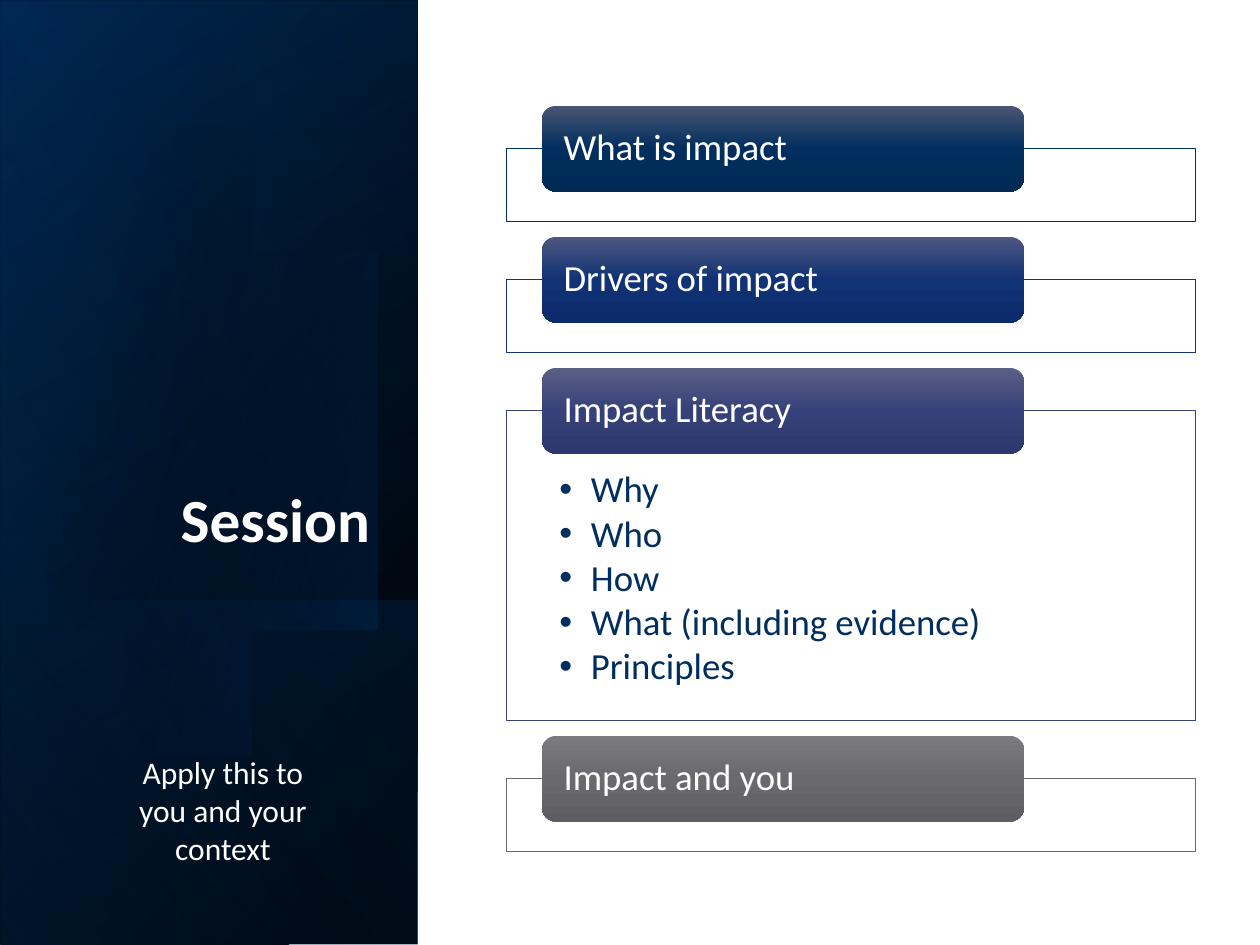
from typing import NamedTuple

from lxml.etree import SubElement
from pptx import Presentation
from pptx.dml.color import RGBColor
from pptx.enum.shapes import MSO_SHAPE as SHAPE
from pptx.enum.text import MSO_ANCHOR as ANCHOR, PP_ALIGN as ALIGN
from pptx.oxml.ns import qn
from pptx.util import Inches, Pt

WHITE = RGBColor(0xFF, 0xFF, 0xFF)
BLACK = RGBColor(0x00, 0x00, 0x00)
NAVY = RGBColor(0x00, 0x2E, 0x5E)
DEEP_NAVY = RGBColor(0x00, 0x22, 0x46)
BRIGHT_BLUE = RGBColor(0x05, 0x80, 0xFF)
FONT = "Calibri"


class Stop(NamedTuple):
    pos: int
    color: RGBColor
    alpha: int = 100


class Panel(NamedTuple):
    left: float
    top: float
    width: float
    angle: int
    stops: list[Stop]


class Topic(NamedTuple):
    label: str
    colors: tuple[str, str, str]
    line: str
    height: float = 0.58
    bullets: tuple[str, ...] = ()


PANEL_HEIGHT = 3.31
PANELS = [
    Panel(-2.09, 2.09, 7.5, 50, [Stop(8, BLACK), Stop(100, DEEP_NAVY)]),
    Panel(-2.09, 2.11, 7.5, 30, [Stop(0, BLACK, 0), Stop(99, NAVY, 46)]),
    Panel(0.29, 4.48, 2.74, 130, [Stop(2, NAVY, 29), Stop(100, BLACK, 30)]),
]
GLOW = Panel(-2.09, 2.09, 7.5, 120, [Stop(0, BLACK, 0), Stop(99, BRIGHT_BLUE, 11)])

# Outline of the rounded shade: start point, then Bezier (two controls, end)
SHADE_START = (0.96, 1.14)
SHADE_RIGHT = [
    ((1.71, 1.22), (2.44, 1.92), (2.73, 2.9)),
    ((3.07, 4.12), (2.62, 5.31), (1.71, 5.57)),
    ((1.14, 5.74), (0.53, 5.5), (0.07, 5)),
]
SHADE_EDGE = [(-0.03, 4.88), (-0.25, 1.66), (-0.15, 1.54)]
SHADE_TOP = [
    ((0.02, 1.37), (0.22, 1.25), (0.45, 1.18)),
    ((0.62, 1.13), (0.79, 1.12), (0.96, 1.14)),
]

TOPICS = [
    Topic("What is impact", ("4B5573", "002E5E", "002954"), "002E5E"),
    Topic("Drivers of impact", ("4D5782", "113275", "0B2B6C"), "163370"),
    Topic("Impact Literacy", ("5A5F86", "364179", "2D386E"), "394376", 2.46,
          ("Why", "Who", "How", "What (including evidence)", "Principles")),
    Topic("Impact and you", ("7B7B7F", "69696E", "5D5D62"), "69696E"),
]
TOPICS_TOP, TAB_RISE, TOPIC_GAP = 0.84, 0.34, 0.12


def set_attrs(obj, **values) -> None:
    for name, value in values.items():
        setattr(obj, name, value)


def set_gradient(sp, stops: list[Stop], angle: int) -> None:
    sp.fill.background()
    old = sp._element.spPr.find(qn("a:noFill"))
    grad = SubElement(sp._element.spPr, qn("a:gradFill"), rotWithShape="1")
    stop_list = SubElement(grad, qn("a:gsLst"))
    for stop in stops:
        gs = SubElement(stop_list, qn("a:gs"), pos=str(stop.pos * 1000))
        clr = SubElement(gs, qn("a:srgbClr"), val=str(stop.color))
        if stop.alpha < 100:
            SubElement(clr, qn("a:alpha"), val=str(stop.alpha * 1000))
    SubElement(grad, qn("a:lin"), ang=str(angle * 60000), scaled="0")
    sp._element.spPr.replace(old, grad)


def add_box(shapes, kind, left: float, top: float, width: float, height: float):
    sp = shapes.add_shape(kind, Inches(left), Inches(top), Inches(width), Inches(height))
    sp.shadow.inherit = False
    sp.line.fill.background()
    return sp


def add_panel(shapes, panel: Panel) -> None:
    sp = add_box(shapes, SHAPE.RECTANGLE, panel.left, panel.top, panel.width, PANEL_HEIGHT)
    sp.rotation = 90
    sp._element.spPr.find(qn("a:xfrm")).set("flipH", "1")
    set_gradient(sp, panel.stops, panel.angle)


def curve_points(start, curves, steps: int = 16) -> list[tuple[float, float]]:
    points = []
    for c1, c2, end in curves:
        for i in range(1, steps + 1):
            t = i / steps
            u = 1 - t
            points.append(tuple(
                u**3 * a + 3 * u * u * t * b + 3 * u * t * t * c + t**3 * d
                for a, b, c, d in zip(start, c1, c2, end)))
        start = end
    return points


def add_shade(shapes) -> None:
    points = (curve_points(SHADE_START, SHADE_RIGHT) + SHADE_EDGE
              + curve_points(SHADE_EDGE[-1], SHADE_TOP))
    builder = shapes.build_freeform(*SHADE_START, scale=Inches(1))
    builder.add_line_segments(points, close=True)
    sp = builder.convert_to_shape()
    sp.shadow.inherit = False
    sp.line.fill.background()
    set_gradient(sp, [Stop(29, BLACK, 0), Stop(100, NAVY, 43)], 14)


def set_text(tf, lines, size: float, color: RGBColor, frame: dict, para: dict,
             bold: bool = False, bulleted: bool = False) -> None:
    set_attrs(tf, word_wrap=True, **frame)
    for i, line in enumerate(lines):
        p = tf.add_paragraph() if i else tf.paragraphs[0]
        set_attrs(p, **para)
        if bulleted:
            p_pr = p._p.get_or_add_pPr()
            p_pr.set("marL", str(Inches(0.25)))
            p_pr.set("indent", str(-Inches(0.25)))
            SubElement(p_pr, qn("a:buFont"), typeface="Arial")
            SubElement(p_pr, qn("a:buChar"), char="•")
        r = p.add_run()
        r.text = line
        set_attrs(r.font, name=FONT, size=Pt(size), bold=bold)
        r.font.color.rgb = color


def add_topic(shapes, topic: Topic, top: float) -> None:
    # Outlined frame with optional bullets
    sp = add_box(shapes, SHAPE.RECTANGLE, 4.02, top + TAB_RISE, 5.47, topic.height)
    sp.fill.solid()
    sp.fill.fore_color.rgb = WHITE
    sp.line.color.rgb = RGBColor.from_string(topic.line)
    sp.line.width = Pt(0.5)
    if topic.bullets:
        set_text(sp.text_frame, topic.bullets, 21, NAVY,
                 dict(vertical_anchor=ANCHOR.TOP, margin_left=Inches(0.42),
                      margin_right=Inches(0.42), margin_top=Inches(0.48),
                      margin_bottom=Inches(0.16)),
                 dict(alignment=ALIGN.LEFT, line_spacing=0.9, space_after=Pt(2.6)),
                 bulleted=True)

    # Coloured tab with the label
    sp = add_box(shapes, SHAPE.ROUNDED_RECTANGLE, 4.3, top, 3.83, 0.68)
    colors = [RGBColor.from_string(c) for c in topic.colors]
    set_gradient(sp, [Stop(i * 50, c) for i, c in enumerate(colors)], 90)
    set_text(sp.text_frame, [topic.label], 21, WHITE,
             dict(vertical_anchor=ANCHOR.MIDDLE, margin_left=Inches(0.14),
                  margin_right=Inches(0.14), margin_top=0, margin_bottom=0),
             dict(alignment=ALIGN.LEFT, line_spacing=0.9))


def main() -> None:
    prs = Presentation()
    set_attrs(prs, slide_width=Inches(10), slide_height=Inches(7.5))
    slide = prs.slides.add_slide(prs.slide_layouts[5])
    shapes = slide.shapes

    # Dark side panel
    for panel in PANELS:
        add_panel(shapes, panel)
    add_shade(shapes)
    add_panel(shapes, GLOW)

    # Title, brought in front of the panel
    title = shapes.title
    set_attrs(title, left=Inches(0.48), top=Inches(1.84),
              width=Inches(2.56), height=Inches(2.62))
    set_text(title.text_frame, ["Session"], 35, WHITE,
             dict(vertical_anchor=ANCHOR.BOTTOM),
             dict(alignment=ALIGN.RIGHT, line_spacing=0.9), bold=True)
    shapes._spTree.append(title._element)

    # Topics, stacked with equal gaps
    top = TOPICS_TOP
    for topic in TOPICS:
        add_topic(shapes, topic, top)
        top += TAB_RISE + topic.height + TOPIC_GAP

    # Closing remark
    note = shapes.add_textbox(Inches(0.94), Inches(5.93), Inches(1.66), Inches(1.01))
    set_text(note.text_frame, ["Apply this to you and your context"], 18, WHITE,
             {}, dict(alignment=ALIGN.CENTER))

    prs.save("out.pptx")


if __name__ == "__main__":
    main()
